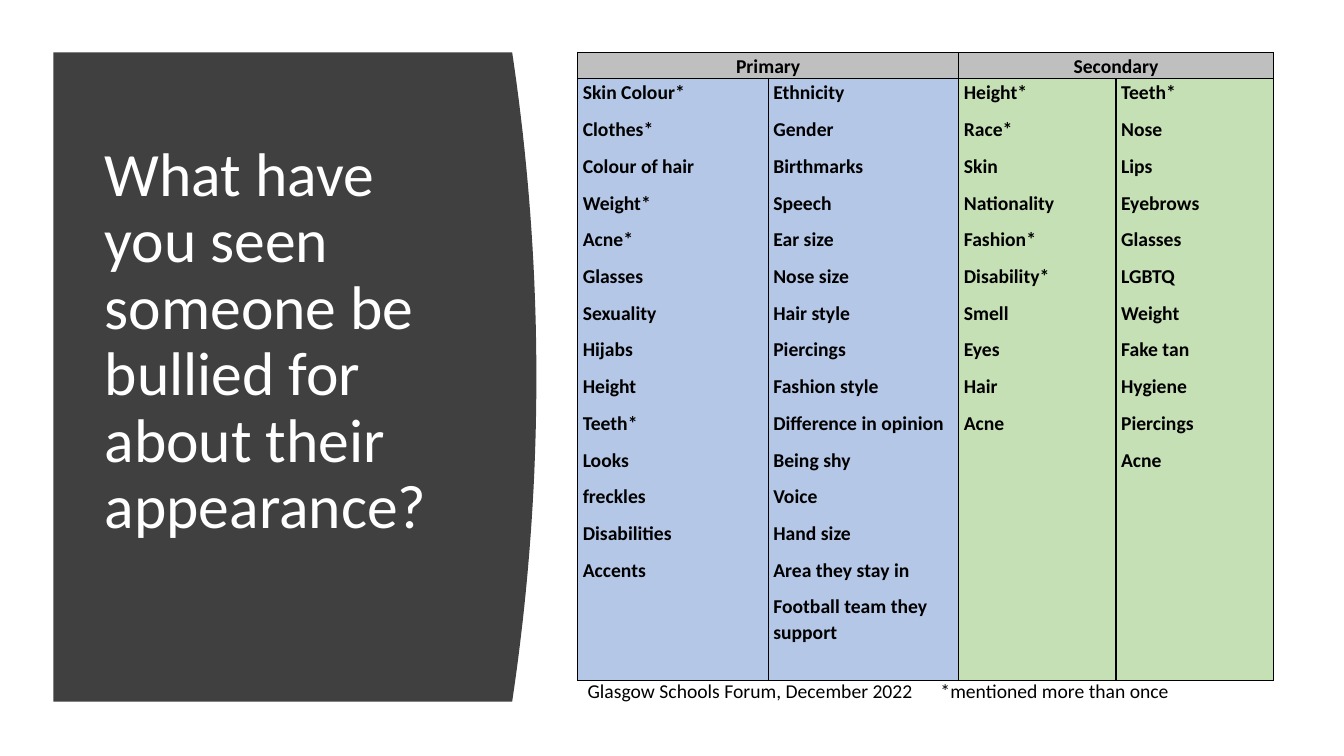
import pptx
import pptx.dml.color
import pptx.enum.text
import pptx.oxml
import pptx.oxml.ns
import pptx.util
from dataclasses import dataclass

Inches = pptx.util.Inches
Pt = pptx.util.Pt
ALIGN = pptx.enum.text.PP_ALIGN


@dataclass(frozen=True)
class Theme:
    font: str = "Calibri"
    panel: str = "404040"
    light: str = "FFFFFF"
    dark: str = "000000"
    header: str = "BFBFBF"
    primary: str = "B4C7E7"
    secondary: str = "C5E0B4"
    title_size: int = 44
    body_size: int = 14


THEME = Theme()

QUESTION = "What have you seen someone be bullied for about their appearance?"
FOOTNOTE = "Glasgow Schools Forum, December 2022\t*mentioned more than once"
GROUPS = [
    ("Primary", THEME.primary, 1.89, [
        ["Skin Colour*", "Clothes*", "Colour of hair", "Weight*", "Acne*",
         "Glasses", "Sexuality", "Hijabs", "Height", "Teeth*", "Looks",
         "freckles", "Disabilities", "Accents"],
        ["Ethnicity", "Gender", "Birthmarks", "Speech", "Ear size",
         "Nose size", "Hair style", "Piercings", "Fashion style",
         "Difference in opinion", "Being shy", "Voice", "Hand size",
         "Area they stay in", "Football team they support"],
    ]),
    ("Secondary", THEME.secondary, 1.56, [
        ["Height*", "Race*", "Skin", "Nationality", "Fashion*",
         "Disability*", "Smell", "Eyes", "Hair", "Acne"],
        ["Teeth*", "Nose", "Lips", "Eyebrows", "Glasses", "LGBTQ",
         "Weight", "Fake tan", "Hygiene", "Piercings", "Acne"],
    ]),
]


def color(value):
    return pptx.dml.color.RGBColor.from_string(value)


def style_text(frame, size, ink, bold=False):
    for para in frame.paragraphs:
        for span in para.runs:
            span.font.name = THEME.font
            span.font.size = Pt(size)
            span.font.bold = bold
            span.font.color.rgb = color(ink)


def add_text(page, box, text, size, ink):
    left, top, width, height = box
    frame = page.shapes.add_textbox(
        Inches(left), Inches(top), Inches(width), Inches(height)).text_frame
    frame.word_wrap = True
    frame.text = text
    style_text(frame, size, ink)
    return frame


def add_question_panel(page, box):
    """Dark panel whose right side bulges as a parabola, with the question on it."""
    left, top, width, height = box
    bulge, steps = 0.24, 40
    curve = []
    for step in range(steps + 1):
        offset = 2 * step / steps - 1
        curve.append((Inches(left + width - bulge * offset ** 2),
                      Inches(top + height * step / steps)))
    outline = page.shapes.build_freeform(Inches(left), Inches(top))
    outline.add_line_segments(curve + [(Inches(left), Inches(top + height))], close=True)
    panel = outline.convert_to_shape()
    panel.shadow.inherit = False
    panel.fill.solid()
    panel.fill.fore_color.rgb = color(THEME.panel)
    panel.line.fill.background()

    question_box = (left + 0.41, top + 0.59, 3.74, height - 1.2)
    frame = add_text(page, question_box, QUESTION, THEME.title_size, THEME.light)
    frame.vertical_anchor = pptx.enum.text.MSO_ANCHOR.MIDDLE
    frame.margin_bottom = Inches(0.71)
    frame.paragraphs[0].line_spacing = 0.9


def add_borders(cell):
    properties = cell._tc.get_or_add_tcPr()
    for side in "LRTB":
        properties.append(pptx.oxml.parse_xml(
            f'<a:ln{side} {pptx.oxml.ns.nsdecls("a")} w="12700"><a:solidFill>'
            f'<a:srgbClr val="{THEME.dark}"/></a:solidFill></a:ln{side}>'))


def fill_cell(cell, lines, fill, align):
    add_borders(cell)
    cell.fill.solid()
    cell.fill.fore_color.rgb = color(fill)
    cell.margin_left = cell.margin_right = Inches(0.05)
    cell.margin_top, cell.margin_bottom = Inches(0.01), 0
    cell.text_frame.text = "\n".join(lines)
    for para in cell.text_frame.paragraphs:
        para.alignment = align
        para.line_spacing = 1.07
        para.space_after = Pt(8)
    style_text(cell.text_frame, THEME.body_size, THEME.dark, bold=True)


def add_answer_table(page, box):
    left, top, width, height = box
    columns = sum(len(group[3]) for group in GROUPS)
    table = page.shapes.add_table(
        2, columns, Inches(left), Inches(top), Inches(width), Inches(height)).table
    table.first_row = table.horz_banding = False
    header_height = 0.26
    table.rows[0].height = Inches(header_height)
    table.rows[1].height = Inches(height - header_height)
    first = 0
    for heading, fill, column_width, lists in GROUPS:
        last = first + len(lists) - 1
        table.cell(0, first).merge(table.cell(0, last))
        for column, answers in enumerate(lists, first):
            table.columns[column].width = Inches(column_width)
            fill_cell(table.cell(0, column), [heading] if column == first else [],
                      THEME.header, ALIGN.CENTER)
            fill_cell(table.cell(1, column), answers, fill, ALIGN.LEFT)
        first = last + 1


def main():
    deck = pptx.Presentation()
    deck.slide_width, deck.slide_height = Inches(13.33), Inches(7.5)
    page = deck.slides.add_slide(deck.slide_layouts[6])
    add_question_panel(page, (0.53, 0.52, 4.79, 6.44))
    add_answer_table(page, (5.73, 0.52, 6.9, 6.23))
    add_text(page, (5.73, 6.69, 6.9, 0.34), FOOTNOTE, THEME.body_size, THEME.dark)
    deck.save("out.pptx")


if __name__ == "__main__":
    main()
